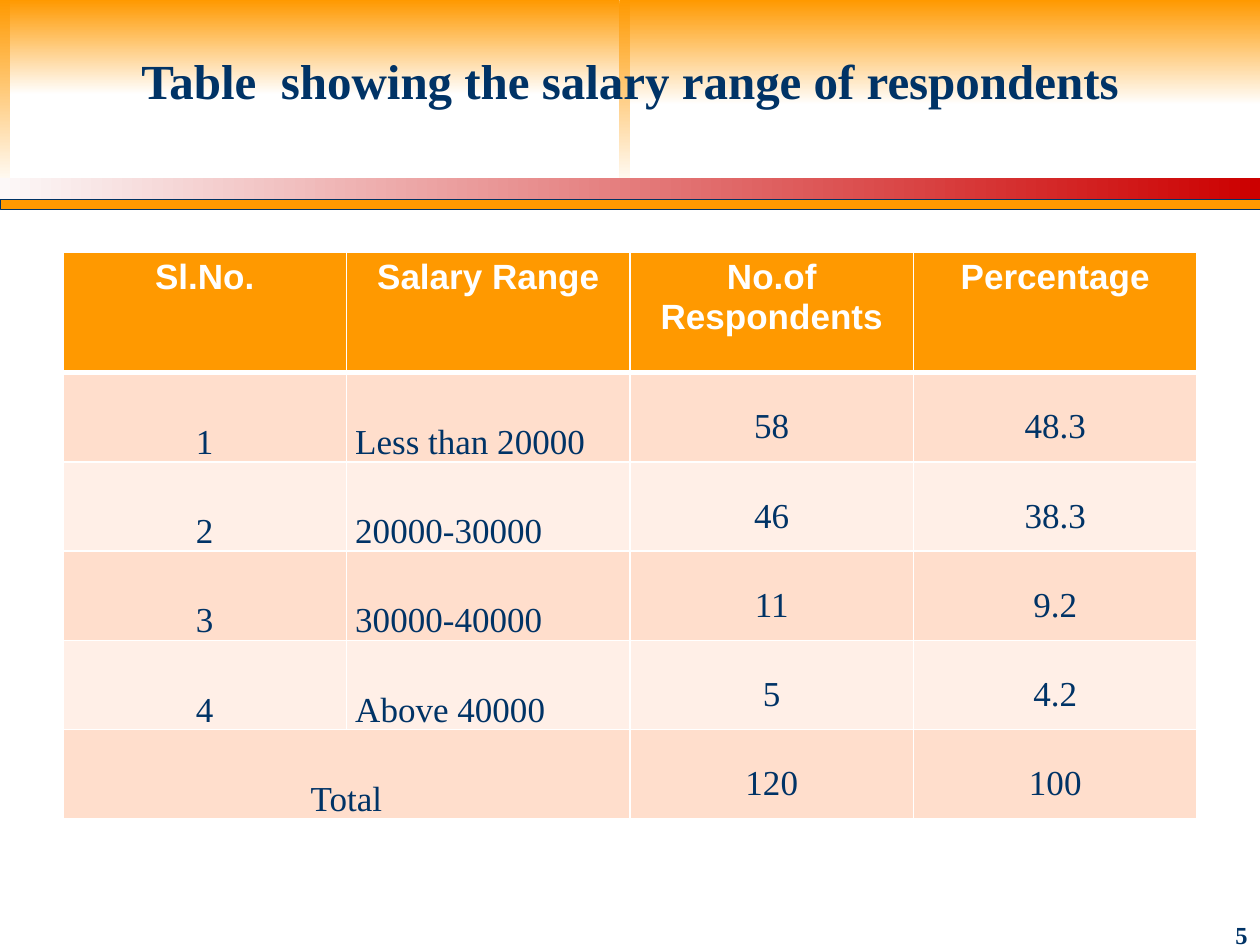
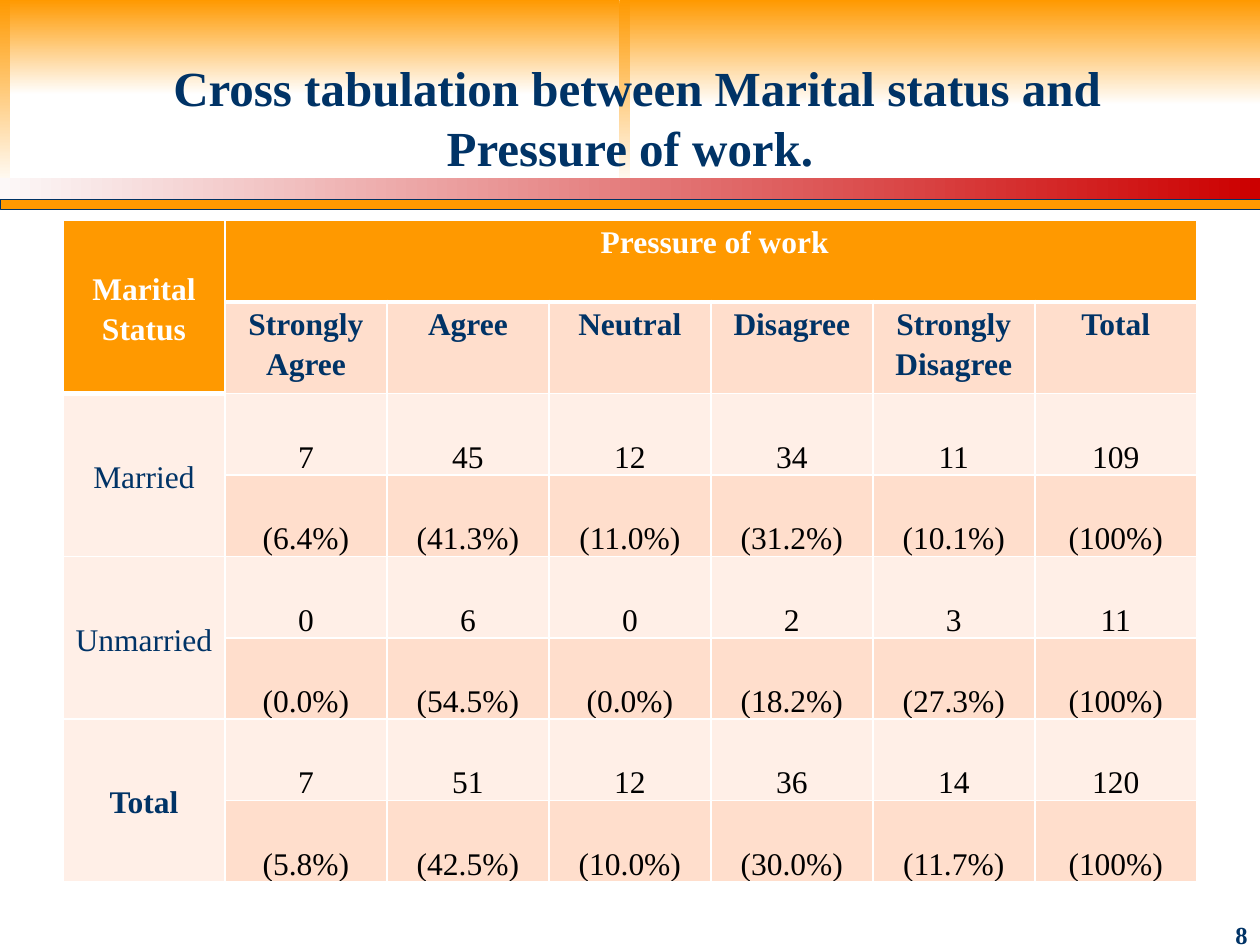
import pptx
import pptx.util
import pptx.dml.color
import pptx.enum.shapes
import pptx.enum.text
import pptx.oxml.ns
import lxml.etree

Pt = pptx.util.Pt
ALIGN = pptx.enum.text.PP_ALIGN
ANCHOR = pptx.enum.text.MSO_ANCHOR

THEME = {
    "orange": "FF9900", "red": "CC0000", "pale_red": "FCF8F8",
    "navy": "003366", "white": "FFFFFF", "black": "000000",
    "row_fills": ("FFEFE7", "FFDECC"),
    "serif": "Times New Roman", "sans": "Arial",
    "title_size": 28, "title_lead_size": 32, "number_size": 14,
    "grid_line": 1, "header_line": 3,
}
SLIDE_WIDTH, SLIDE_HEIGHT = 720, 540
TABLE_LEFT, TABLE_WIDTH = 36, 648

# Bands: left, top, width, height, colours (first to last), angle
BANDS = [
    (0, 0, 354, 54, ("orange", "white"), 270),
    (0, 113.75, 720, 6, ("orange",), None),
    (354, 0, 6, 108, ("orange", "white"), 270),
    (0, 0, 6, 108, ("orange", "white"), 270),
    (0, 101.75, 720, 12, ("pale_red", "red"), 0),
    (360, 0, 360, 60, ("orange", "white"), 270),
]

SALARY = {
    "number": 5,
    "title": [("Table  showing the salary range of respondents", "title_size")],
    "top": 144,
    "row_heights": [69] + [51] * 5,
    "rows": [
        ("Sl.No.", "Salary Range", "No.of Respondents", "Percentage"),
        ("1", "Less than 20000", "58", "48.3"),
        ("2", "20000-30000", "46", "38.3"),
        ("3", "30000-40000", "11", "9.2"),
        ("4", "Above 40000", "5", "4.2"),
        ("Total", None, "120", "100"),
    ],
    "merges": [(5, 0, 5, 1)],
    "headers": {(0, column) for column in range(4)},
}

MARITAL = {
    "number": 8,
    "title": [(" ", "title_lead_size"),
              ("Cross tabulation between Marital status and Pressure of work.", "title_size")],
    "top": 126,
    "row_heights": [46.5, 52.5] + [46.5] * 6,
    "rows": [
        ("Marital Status", " Pressure of work") + (None,) * 5,
        (None, "Strongly Agree", "Agree", "Neutral", "Disagree", "Strongly Disagree", "Total"),
        ("Married", "7", "45", "12", "34", "11", "109"),
        (None, "(6.4%)", "(41.3%)", "(11.0%)", "(31.2%)", "(10.1%)", "(100%)"),
        ("Unmarried", "0", "6", "0", "2", "3", "11"),
        (None, "(0.0%)", "(54.5%)", "(0.0%)", "(18.2%)", "(27.3%)", "(100%)"),
        ("Total", "7", "51", "12", "36", "14", "120"),
        (None, "(5.8%)", "(42.5%)", "(10.0%)", "(30.0%)", "(11.7%)", "(100%)"),
    ],
    "merges": [(0, 1, 0, 6)] + [(row, 0, row + 1, 0) for row in (0, 2, 4, 6)],
    "headers": {(0, column) for column in range(7)} | {(1, 0)},
}


def salary_style(row, column):
    style = {"size": 20, "font": "serif", "color": "navy", "bold": False,
             "align": ALIGN.CENTER, "anchor": ANCHOR.MIDDLE,
             "spacing": 1.5, "margins": (5, 0)}
    if row == 0:
        style.update(font="sans", color="white", bold=True, anchor=ANCHOR.TOP,
                     spacing=1.0, margins=(7.2, 3.6))
    elif column < 2:
        style["anchor"] = ANCHOR.BOTTOM
        if column == 1:
            style["align"] = ALIGN.LEFT
    return style


def marital_style(row, column):
    style = {"size": 18, "font": "serif", "color": "black", "bold": False,
             "align": ALIGN.CENTER, "anchor": ANCHOR.BOTTOM,
             "spacing": 1.15, "margins": (5, 0)}
    if column == 0:
        style.update(anchor=ANCHOR.MIDDLE, color="navy" if row else "white",
                     bold=row in (0, 6))
    elif row < 2:
        style.update(anchor=ANCHOR.TOP, color="navy" if row else "white", bold=True)
    return style


def rgb(name):
    return pptx.dml.color.RGBColor.from_string(THEME.get(name, name))


def set_attributes(target, values):
    for name, value in values.items():
        setattr(target, name, value)


def add_run(paragraph, text, size, color="navy", bold=True, font="serif"):
    run = paragraph.add_run()
    run.text = text
    set_attributes(run.font, {"size": Pt(size), "bold": bold, "name": THEME[font]})
    run.font.color.rgb = rgb(color)


def add_text(slide, box, runs, align, margin_top):
    frame = slide.shapes.add_textbox(*map(Pt, box)).text_frame
    set_attributes(frame, {"word_wrap": True, "vertical_anchor": ANCHOR.TOP,
                           "margin_top": Pt(margin_top), "margin_bottom": 0})
    paragraph = frame.paragraphs[0]
    paragraph.alignment = align
    for text, size in runs:
        add_run(paragraph, text, THEME[size])


def add_bands(slide):
    for left, top, width, height, colors, angle in BANDS:
        shape = slide.shapes.add_shape(pptx.enum.shapes.MSO_SHAPE.RECTANGLE,
                                       Pt(left), Pt(top), Pt(width), Pt(height))
        shape.shadow.inherit = False
        if angle is None:
            shape.fill.solid()
            shape.fill.fore_color.rgb = rgb(colors[0])
            shape.line.color.rgb = rgb("navy")
            shape.line.width = Pt(0.25)
            continue
        shape.line.fill.background()
        shape.fill.gradient()
        shape.fill.gradient_angle = angle
        for stop, color in zip(shape.fill.gradient_stops, colors):
            stop.color.rgb = rgb(color)


def set_borders(cell, top, bottom):
    """Draw white cell borders; they must come before the fill in the XML."""
    qn = pptx.oxml.ns.qn
    properties = cell._tc.get_or_add_tcPr()
    sides = {"a:lnL": THEME["grid_line"], "a:lnR": THEME["grid_line"],
             "a:lnT": top, "a:lnB": bottom}
    for index, (tag, width) in enumerate(sides.items()):
        line = lxml.etree.Element(qn(tag), w=str(int(Pt(width))))
        fill = lxml.etree.SubElement(line, qn("a:solidFill"))
        lxml.etree.SubElement(fill, qn("a:srgbClr"), val=THEME["white"])
        properties.insert(index, line)


def add_table(slide, content, style_of):
    rows, headers = content["rows"], content["headers"]
    column_count = len(rows[0])
    table = slide.shapes.add_table(
        len(rows), column_count, Pt(TABLE_LEFT), Pt(content["top"]),
        Pt(TABLE_WIDTH), Pt(sum(content["row_heights"]))).table
    set_attributes(table, {"first_row": False, "horz_banding": False})
    for column in table.columns:
        column.width = Pt(TABLE_WIDTH / column_count)
    for table_row, height in zip(table.rows, content["row_heights"]):
        table_row.height = Pt(height)

    def line_below(position):
        return THEME["header_line" if position in headers else "grid_line"]

    for row, texts in enumerate(rows):
        for column, text in enumerate(texts):
            cell = table.cell(row, column)
            style = style_of(row, column)
            side, end = map(Pt, style["margins"])
            set_attributes(cell, {"margin_left": side, "margin_right": side,
                                  "margin_top": end, "margin_bottom": end,
                                  "vertical_anchor": style["anchor"]})
            cell.fill.solid()
            is_header = (row, column) in headers
            cell.fill.fore_color.rgb = rgb("orange" if is_header else THEME["row_fills"][row % 2])
            set_borders(cell, line_below((row - 1, column)), line_below((row, column)))
            if text is not None:
                paragraph = cell.text_frame.paragraphs[0]
                set_attributes(paragraph, {"alignment": style["align"],
                                           "line_spacing": style["spacing"]})
                add_run(paragraph, text, style["size"], style["color"],
                        style["bold"], style["font"])
    for top, left, bottom, right in content["merges"]:
        table.cell(top, left).merge(table.cell(bottom, right))


def main():
    presentation = pptx.Presentation()
    set_attributes(presentation, {"slide_width": Pt(SLIDE_WIDTH),
                                  "slide_height": Pt(SLIDE_HEIGHT)})
    for content, style_of in ((SALARY, salary_style), (MARITAL, marital_style)):
        slide = presentation.slides.add_slide(presentation.slide_layouts[6])
        add_bands(slide)
        add_text(slide, (36, 21.6, 648, 90), content["title"], ALIGN.CENTER, 7)
        add_table(slide, content, style_of)
        add_text(slide, (666, 520.5, 54, 19.5), [(str(content["number"]), "number_size")],
                 ALIGN.RIGHT, 5)
    presentation.save("out.pptx")


if __name__ == "__main__":
    main()
